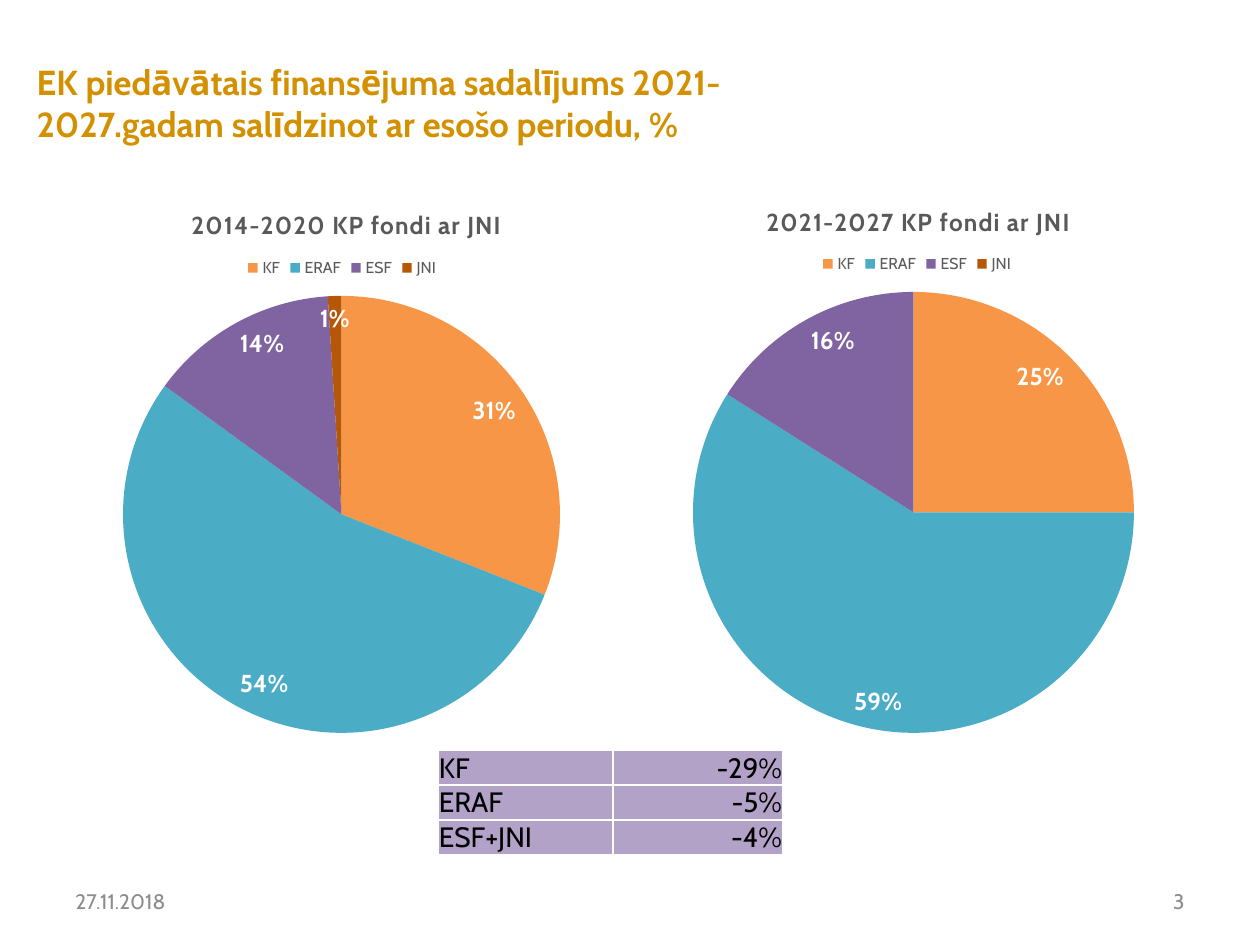
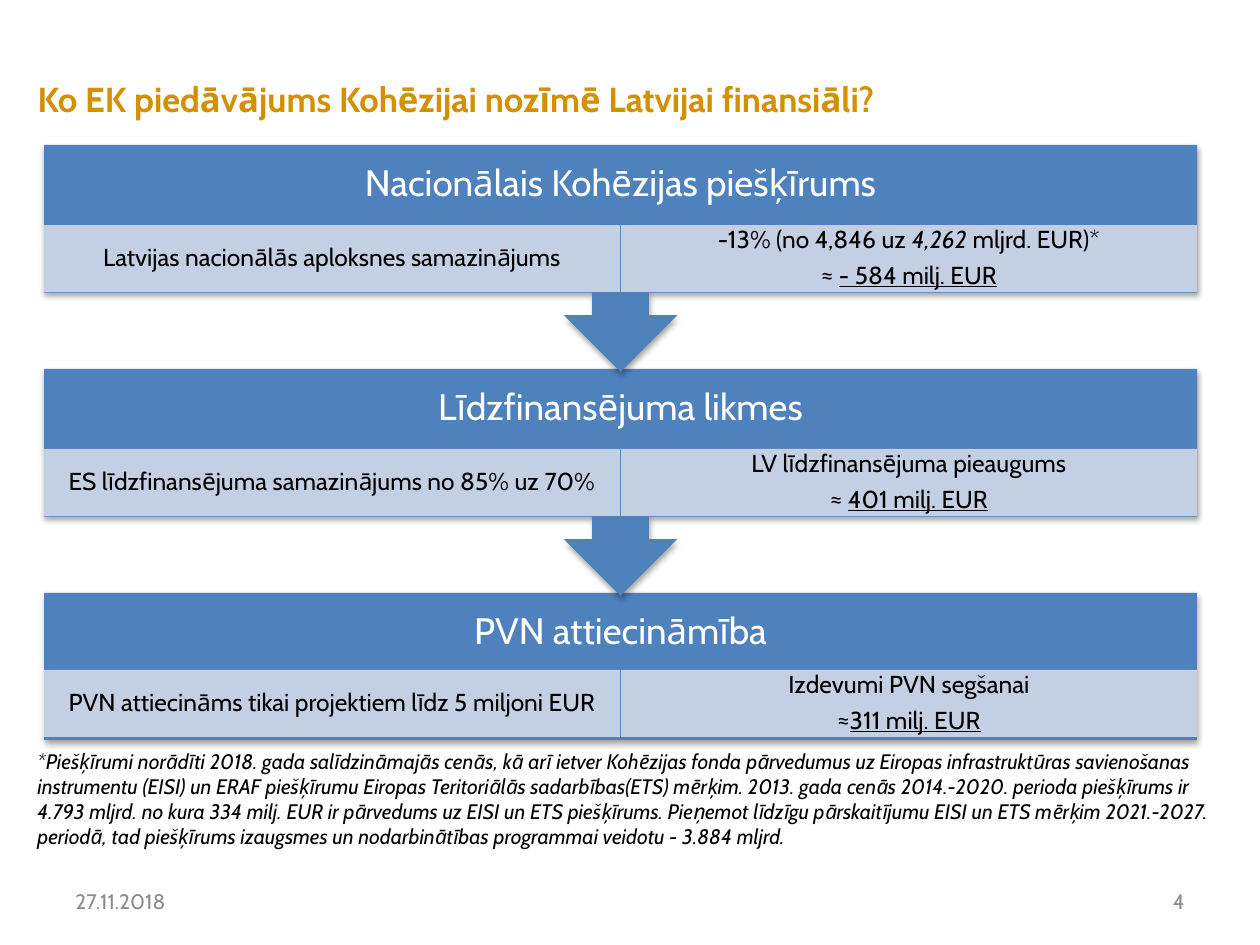
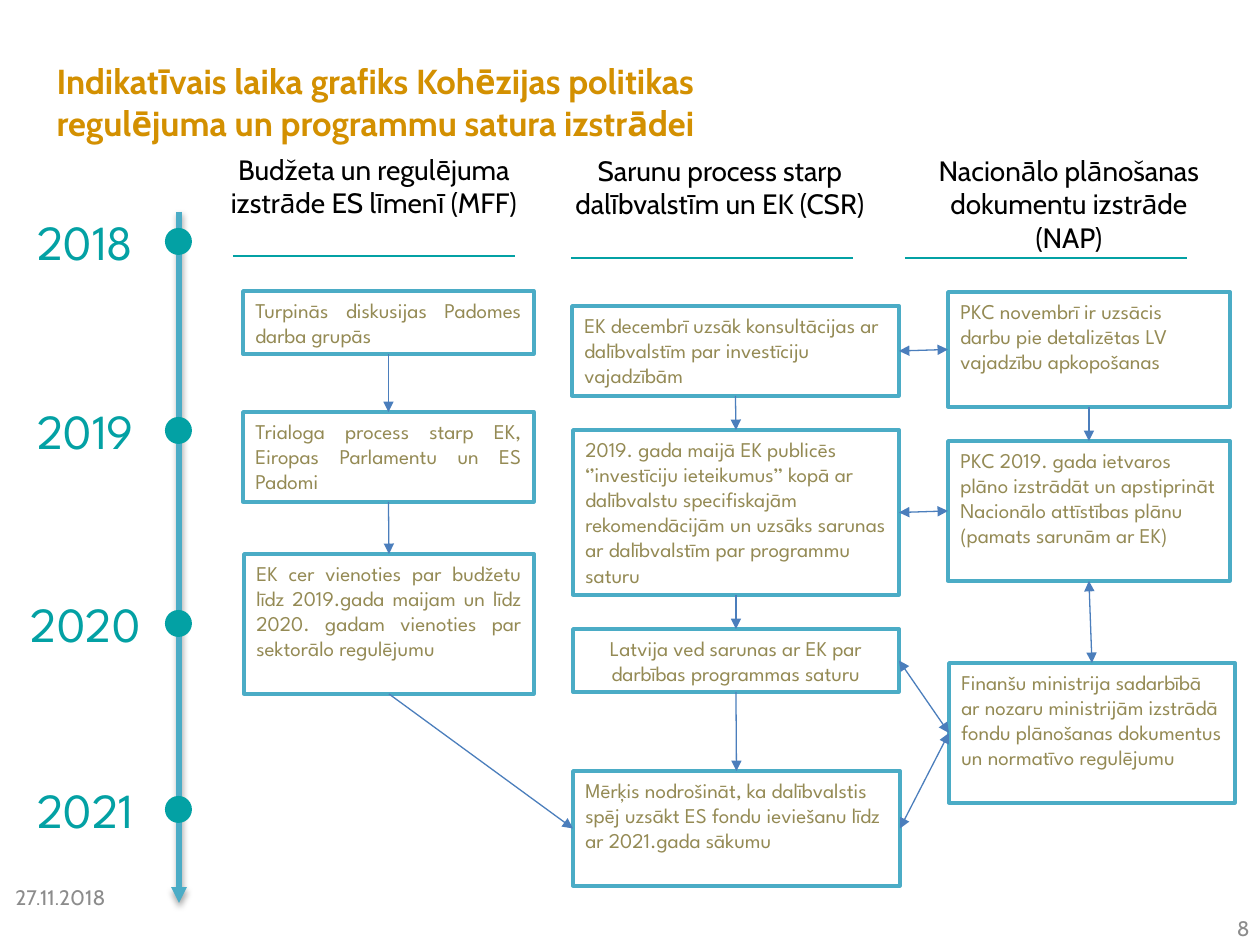
from lxml import etree
from pptx import Presentation
from pptx import util as u
from pptx.chart.data import CategoryChartData
from pptx.dml.color import RGBColor
from pptx.enum import chart as ch, shapes, text
from pptx.oxml import parse_xml
from pptx.oxml.ns import nsdecls, qn

PX = 7257  # EMU in one px, 126 px to the inch
FONT, TIMELINE_FONT = "Cabin", "League Spartan"
COLORS = {
    "title": "D39001", "footer": "8C8C8C", "text": "000000", "white": "FFFFFF",
    "chart_text": "595959", "KF": "F79646", "ERAF": "4BACC6", "ESF": "8064A2", "JNI": "B65708",
    "table": "B3A2C7", "step": "4F81BD", "detail": "D0D8E8",
    "year": "03A1A4", "frame": "4BACC6", "arrow": "4B7EBC", "event": "948A54",
}
RGB = {name: RGBColor.from_string(value) for name, value in COLORS.items()}
LEFT, CENTER, RIGHT, JUSTIFY = (text.PP_ALIGN.LEFT, text.PP_ALIGN.CENTER,
                                text.PP_ALIGN.RIGHT, text.PP_ALIGN.JUSTIFY)
TOP, MIDDLE = text.MSO_ANCHOR.TOP, text.MSO_ANCHOR.MIDDLE
SHADOW = (f'<a:effectLst {nsdecls("a")}><a:outerShdw blurRad="40000" dist="23000" dir="5400000" '
          'rotWithShape="0"><a:srgbClr val="000000"><a:alpha val="35000"/></a:srgbClr>'
          '</a:outerShdw></a:effectLst>')
NO_SHADOW = f'<a:effectLst {nsdecls("a")}/>'


def write(frame, paragraphs, size, color, align=LEFT, anchor=TOP, font=FONT):
    """Fill a frame; a paragraph is a string or a list of (text, font settings)."""
    frame.word_wrap = True
    frame.auto_size = text.MSO_AUTO_SIZE.NONE
    frame.vertical_anchor = anchor
    for i, runs in enumerate(paragraphs):
        paragraph = frame.add_paragraph() if i else frame.paragraphs[0]
        paragraph.alignment = align
        for words, settings in [(runs, {})] if isinstance(runs, str) else runs:
            run = paragraph.add_run()
            run.text = words
            run.font.size, run.font.name = u.Pt(size), font
            run.font.color.rgb = RGB[color]
            for key, value in settings.items():
                setattr(run.font, key, value)


def add_box(slide, kind, box, fill, line=None, effect=NO_SHADOW):
    shape = slide.shapes.add_shape(kind, *[v * PX for v in box])
    shape.fill.solid()
    shape.fill.fore_color.rgb = RGB[fill]
    if line:
        shape.line.color.rgb, shape.line.width = RGB[line], u.Pt(2)
    else:
        shape.line.fill.background()
    shape.element.spPr.append(parse_xml(effect))
    return shape


prs = Presentation()
prs.slide_width, prs.slide_height = u.Inches(10), u.Inches(7.5)

# Title, date and page number of every slide
pages = [
    ("EK piedāvātais finansējuma sadalījums 2021-2027.gadam salīdzinot ar esošo periodu, %",
     (24, 73, 823, 59), "3", (63, 876), (903, 876)),
    ("Ko EK piedāvājums Kohēzijai nozīmē Latvijai finansiāli?",
     (25, 69, 903, 59), "4", (63, 876), (903, 876)),
    ("Indikatīvais laika grafiks Kohēzijas politikas regulējuma un programmu satura izstrādei",
     (44, 72, 838, 59), "8", (3, 872), (968, 903)),
]
slides = []
for heading, box, number, date_at, number_at in pages:
    slide = prs.slides.add_slide(prs.slide_layouts[5])
    slides.append(slide)
    title = slide.shapes.title
    title.left, title.top, title.width, title.height = [v * PX for v in box]
    write(title.text_frame, [[(heading, {"bold": True})]], 19.8, "title", anchor=MIDDLE)
    for words, (x, y), align in [("27.11.2018", date_at, LEFT), (number, number_at, RIGHT)]:
        footer = slide.shapes.add_textbox(x * PX, y * PX, 294 * PX, 50 * PX)
        write(footer.text_frame, [words], 12, "footer", align, MIDDLE)
funding, impact, schedule = slides

# Funding shares: two pies
funds = ["KF", "ERAF", "ESF", "JNI"]
periods = [
    ("2014-2020 KP fondi ar JNI", [31, 54, 14, 1], (24, 179, 635, 572), (187, 204), (123, 296, 437, 437)),
    ("2021-2027 KP fondi ar JNI", [25, 59, 16, 0], (630, 175, 567, 576), (762, 200), (693, 292, 441, 441)),
]
for period, shares, box, title_at, pie_box in periods:
    data = CategoryChartData()
    data.categories = funds
    data.add_series("Series 1", shares)
    chart = funding.shapes.add_chart(ch.XL_CHART_TYPE.PIE, *[v * PX for v in box], data).chart
    chart.font.name, chart.font.size = FONT, u.Pt(10)
    chart.font.color.rgb = RGB["text"]
    chart.has_title = True
    run = chart.chart_title.text_frame.paragraphs[0].add_run()
    run.text = period
    run.font.name, run.font.size, run.font.bold = FONT, u.Pt(14), True
    run.font.color.rgb = RGB["chart_text"]
    run.font._element.set("spc", "50")

    chart.has_legend = True
    chart.legend.position = ch.XL_LEGEND_POSITION.TOP
    chart.legend.include_in_layout = False
    chart.legend.font.name, chart.legend.font.size = FONT, u.Pt(9)
    chart.legend.font.color.rgb = RGB["chart_text"]

    plot = chart.plots[0]
    plot.vary_by_categories = True
    for i, fund in enumerate(funds):
        slice_fill = plot.series[0].points[i].format.fill
        slice_fill.solid()
        slice_fill.fore_color.rgb = RGB[fund]
    labels = plot.series[0].data_labels
    labels.show_percentage, labels.show_value = True, False
    labels.number_format, labels.number_format_is_linked = "0%", False
    labels.position = ch.XL_LABEL_POSITION.INSIDE_END
    labels.font.name, labels.font.size, labels.font.bold = FONT, u.Pt(14), True
    labels.font.color.rgb = RGB["white"]
    for i, share in enumerate(shares):
        if share == 0:
            chart.element.find(".//" + qn("c:ser")).find(qn("c:dLbls")).insert(0, parse_xml(
                f'<c:dLbl {nsdecls("c")}><c:idx val="{i}"/><c:delete val="1"/></c:dLbl>'))

    # Fixed places inside the chart, as fractions of its size
    legend_at = (title_at[0] + 56, title_at[1] + 49)
    for part, index, place in [("title", 1, title_at), ("legend", 1, legend_at), ("plotArea", 0, pie_box)]:
        element = chart.element.find(".//" + qn(f"c:{part}"))
        for old in element.findall(qn("c:layout")):
            element.remove(old)
        fractions = {"x": (place[0] - box[0]) / box[2], "y": (place[1] - box[1]) / box[3]}
        layout = etree.Element(qn("c:layout"))
        manual = etree.SubElement(layout, qn("c:manualLayout"))
        if part == "plotArea":
            etree.SubElement(manual, qn("c:layoutTarget"), val="inner")
            fractions.update(w=place[2] / box[2], h=place[3] / box[3])
        for mode in ("xMode", "yMode"):
            etree.SubElement(manual, qn(f"c:{mode}"), val="edge")
        for key, value in fractions.items():
            etree.SubElement(manual, qn(f"c:{key}"), val=f"{value:.4f}")
        element.insert(index, layout)

# Change per fund
changes = [("KF", "-29%"), ("ERAF", "-5%"), ("ESF+JNI", "-4%")]
table = funding.shapes.add_table(3, 2, 438 * PX, 750 * PX, 345 * PX, 105 * PX).table
table.first_row = table.horz_banding = False
table.columns[0].width, table.columns[1].width = 175 * PX, 170 * PX
for r, change in enumerate(changes):
    for c, (words, align) in enumerate(zip(change, (LEFT, RIGHT))):
        cell = table.cell(r, c)
        write(cell.text_frame, [words], 16, "text", align)
        cell.vertical_anchor = text.MSO_ANCHOR.BOTTOM
        cell.margin_left = cell.margin_right = cell.margin_top = PX
        cell.margin_bottom = 0
        cell.fill.solid()
        cell.fill.fore_color.rgb = RGB["table"]
        for i, side in enumerate("LRTB"):
            cell._tc.get_or_add_tcPr().insert(i, parse_xml(
                f'<a:ln{side} {nsdecls("a")} w="12700"><a:solidFill><a:srgbClr '
                f'val="{COLORS["white"]}"/></a:solidFill></a:ln{side}>'))

# Financial impact: three steps, the lowest one at the back
UNDERLINE, SIGN = {"underline": True}, {"name": "Calibri"}
steps = [
    ("Nacionālais Kohēzijas piešķīrums", "Latvijas nacionālās aploksnes samazinājums",
     [("-13% (no 4,846 uz ", {}), ("4,262", {"italic": True}), (" mljrd. EUR)*", {})],
     [("≈ ", SIGN), ("- 584 milj. EUR", UNDERLINE)]),
    ("Līdzfinansējuma likmes", "ES līdzfinansējuma samazinājums no 85% uz 70%",
     "LV līdzfinansējuma pieaugums", [("≈ ", SIGN), ("401 milj. EUR", UNDERLINE)]),
    ("PVN attiecināmība", "PVN attiecināms tikai projektiem līdz 5 miljoni EUR",
     "Izdevumi PVN segšanai", [("≈", SIGN), ("311 milj. EUR", UNDERLINE)]),
]
for i, (heading, cause, effect, amount) in reversed(list(enumerate(steps))):
    top = 145 + 224 * i
    if i == len(steps) - 1:
        add_box(impact, shapes.MSO_SHAPE.RECTANGLE, (44, top, 1153, 147), "step", effect=SHADOW)
        detail_top = top + 77
    else:
        callout = add_box(impact, shapes.MSO_SHAPE.UP_ARROW_CALLOUT, (44, top, 1153, 227), "step", effect=SHADOW)
        callout.rotation = 180
        detail_top = top + 80
    header = impact.shapes.add_textbox(44 * PX, top * PX, 1153 * PX, 79 * PX).text_frame
    write(header, [heading], 21, "white", CENTER, MIDDLE)
    header.paragraphs[0].line_spacing = 0.9
    for x, paragraphs in [(44, [cause]), (621, [effect, amount])]:
        detail = add_box(impact, shapes.MSO_SHAPE.RECTANGLE, (x, detail_top, 576, 67), "detail")
        etree.SubElement(detail.element.spPr.find(".//" + qn("a:srgbClr")), qn("a:alpha"), val="90000")
        frame = detail.text_frame
        write(frame, paragraphs, 14, "text", CENTER, MIDDLE)
        frame.margin_left = frame.margin_right = 14 * PX
        frame.margin_top = frame.margin_bottom = 3 * PX
        for paragraph in frame.paragraphs:
            paragraph.line_spacing, paragraph.space_after = 0.9, u.Pt(5)

footnote = impact.shapes.add_textbox(25 * PX, 742 * PX, 1206 * PX, 165 * PX)
write(footnote.text_frame, [[(
    "*Piešķīrumi norādīti 2018. gada salīdzināmajās cenās, kā arī ietver Kohēzijas fonda pārvedumus uz "
    "Eiropas infrastruktūras savienošanas instrumentu (EISI) un ERAF piešķīrumu Eiropas Teritoriālās "
    "sadarbības(ETS) mērķim. 2013. gada cenās 2014.-2020. perioda piešķīrums ir 4.793 mljrd. no kura "
    "334 milj. EUR ir pārvedums uz EISI un ETS piešķīrums. Pieņemot līdzīgu pārskaitījumu EISI un ETS "
    "mērķim 2021.-2027. periodā, tad piešķīrums izaugsmes un nodarbinātības programmai veidotu - "
    "3.884 mljrd.", {"italic": True})]], 12, "text")

# Schedule: events in three columns
events = {
    "council": ((243, 291, 291, 63), JUSTIFY, "Turpinās diskusijas Padomes darba grupās"),
    "trialogue": ((243, 412, 291, 90), JUSTIFY, "Trialoga process starp EK, Eiropas Parlamentu un ES Padomi"),
    "budget": ((244, 554, 290, 140), JUSTIFY,
               "EK cer vienoties par budžetu līdz 2019.gada maijam un līdz 2020. gadam vienoties par "
               "sektorālo regulējumu"),
    "consultation": ((572, 306, 327, 90), LEFT,
                     "EK decembrī uzsāk konsultācijas ar dalībvalstīm par investīciju vajadzībām"),
    "advice": ((573, 430, 326, 165), LEFT,
               "2019. gada maijā EK publicēs ‘’investīciju ieteikumus’’ kopā ar dalībvalstu specifiskajām "
               "rekomendācijām un uzsāks sarunas ar dalībvalstīm par programmu saturu"),
    "talks": ((573, 629, 326, 63), CENTER, "Latvija ved sarunas ar EK par darbības programmas saturu"),
    "goal": ((573, 771, 327, 115), LEFT,
             "Mērķis nodrošināt, ka dalībvalstis spēj uzsākt ES fondu ieviešanu līdz ar 2021.gada sākumu"),
    "needs": ((948, 292, 282, 115), LEFT,
              "PKC novembrī ir uzsācis darbu pie detalizētas LV vajadzību apkopošanas"),
    "plan": ((948, 441, 282, 140), LEFT,
             "PKC 2019. gada ietvaros plāno izstrādāt un apstiprināt Nacionālo attīstības plānu "
             "(pamats sarunām ar EK)"),
    "documents": ((949, 663, 286, 140), LEFT,
                  "Finanšu ministrija sadarbībā ar nozaru ministrijām izstrādā fondu plānošanas dokumentus "
                  "un normatīvo regulējumu"),
}
event_boxes = {}
for name, (box, align, words) in events.items():
    event_boxes[name] = add_box(schedule, shapes.MSO_SHAPE.RECTANGLE, box, "white", "frame")
    write(event_boxes[name].text_frame, [words], 12, "event", align, font=TIMELINE_FONT)

# Column headings
columns = [
    (215, 146, 318, ["Budžeta un regulējuma izstrāde ES līmenī (MFF)"]),
    (556, 147, 328, ["Sarunu process starp dalībvalstīm un EK (CSR)"]),
    (905, 147, 328, ["Nacionālo plānošanas dokumentu izstrāde", "(NAP)"]),
]
for x, y, width, paragraphs in columns:
    heading = schedule.shapes.add_textbox(x * PX, y * PX, width * PX, 115 * PX)
    write(heading.text_frame, paragraphs, 16, "text", CENTER)

# Lines: timeline, heading rules, arrows between events (sides: 0 top, 1 left, 2 bottom, 3 right)
lines = [((179, 212, 179, 903), "frame", 3, ["tailEnd"], SHADOW)]
lines += [((x, y, x + 282, y), "year", 1.5, [], NO_SHADOW) for x, y in [(233, 256), (571, 258), (905, 258)]]
ONE_WAY, BOTH_WAYS = ["tailEnd"], ["headEnd", "tailEnd"]
links = [
    ("council", 2, "trialogue", 0, ONE_WAY), ("trialogue", 2, "budget", 0, ONE_WAY),
    ("budget", 2, "goal", 1, ONE_WAY), ("consultation", 2, "advice", 0, ONE_WAY),
    ("advice", 2, "talks", 0, ONE_WAY), ("talks", 2, "goal", 0, ONE_WAY),
    ("needs", 2, "plan", 0, ONE_WAY), ("plan", 2, "documents", 0, BOTH_WAYS),
    ("consultation", 3, "needs", 1, BOTH_WAYS), ("advice", 3, "plan", 1, BOTH_WAYS),
    ("talks", 3, "documents", 1, BOTH_WAYS), ("documents", 1, "goal", 3, BOTH_WAYS),
]
lines += [(link[:4], "arrow", 0.75, link[4], NO_SHADOW) for link in links]
for ends, color, width, heads, effect in lines:
    linked = color == "arrow"
    points = (0, 0, 0, 0) if linked else [v * PX for v in ends]
    connector = schedule.shapes.add_connector(shapes.MSO_CONNECTOR.STRAIGHT, *points)
    if linked:
        connector.begin_connect(event_boxes[ends[0]], ends[1])
        connector.end_connect(event_boxes[ends[2]], ends[3])
    connector.line.color.rgb, connector.line.width = RGB[color], u.Pt(width)
    properties = connector.element.spPr
    for head in heads:
        etree.SubElement(properties.find(qn("a:ln")), qn(f"a:{head}"), type="triangle")
    properties.append(parse_xml(effect))

# Years on the timeline
for year, y in [("2018", 228), ("2019", 417), ("2020", 610), ("2021", 796)]:
    add_box(schedule, shapes.MSO_SHAPE.OVAL, (165, y, 27, 27), "year")
    label = schedule.shapes.add_textbox(8 * PX, (y - 23) * PX, 155 * PX, 72 * PX)
    write(label.text_frame, [year], 28, "year", CENTER, font=TIMELINE_FONT)

prs.save("out.pptx")
